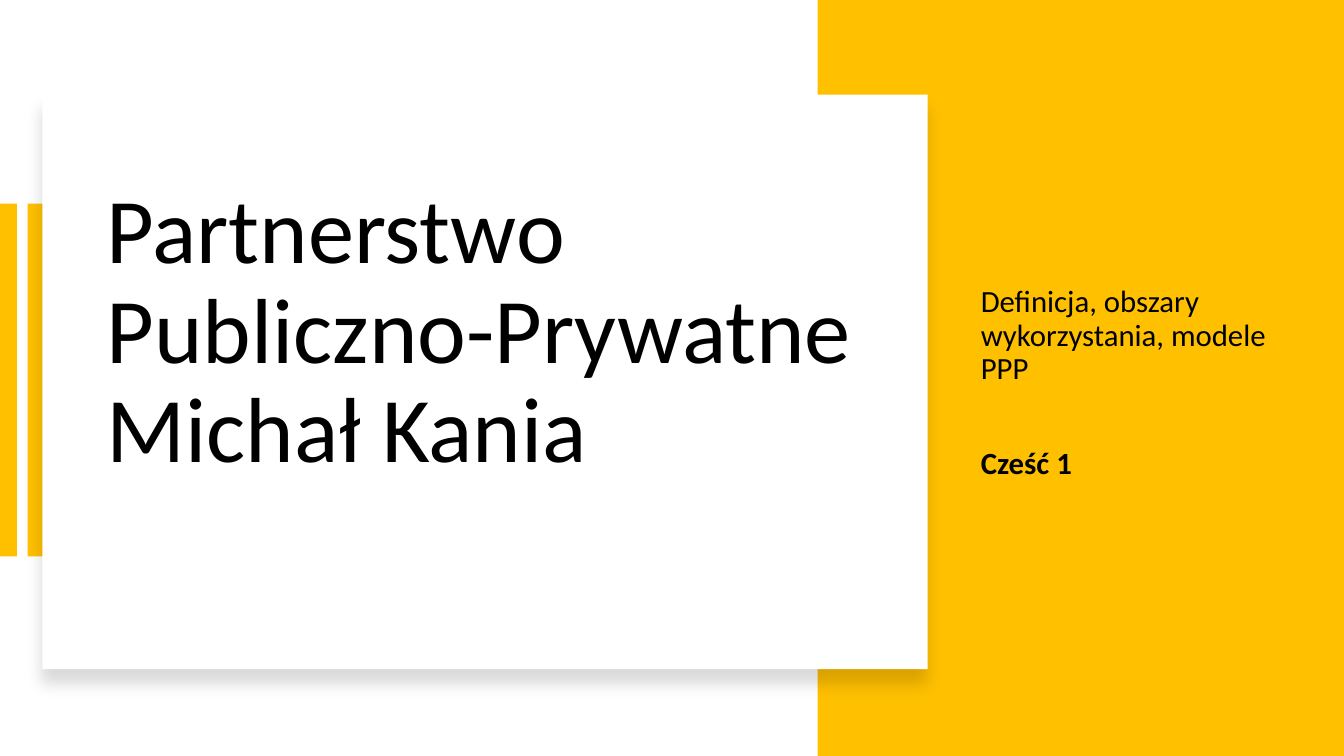
from lxml.etree import SubElement
from pptx import Presentation
from pptx.dml.color import RGBColor
from pptx.enum.shapes import MSO_SHAPE
from pptx.enum.text import MSO_ANCHOR
from pptx.oxml.ns import qn
from pptx.util import Inches, Pt

GOLD = RGBColor(0xFF, 0xC0, 0x00)
WHITE = RGBColor(0xFF, 0xFF, 0xFF)
BLACK = RGBColor(0x00, 0x00, 0x00)

deck = Presentation()
deck.slide_width = Inches(13.33)
deck.slide_height = Inches(7.5)
slide = deck.slides.add_slide(deck.slide_layouts[6])


def place(x, y, w, h):
    """Turn percent shares of the slide into lengths."""
    wide, high = deck.slide_width / 100, deck.slide_height / 100
    return int(x * wide), int(y * high), int(w * wide), int(h * high)


# Side panel, two bars at the left edge, then the card on top
blocks = [
    (60.83, 0, 39.17, 100, GOLD),
    (0, 26.93, 1.26, 46.67, GOLD),
    (2.06, 26.93, 1.26, 46.67, GOLD),
    (3.15, 12.53, 65.87, 76, WHITE),
]
for x, y, w, h, color in blocks:
    card = slide.shapes.add_shape(MSO_SHAPE.RECTANGLE, *place(x, y, w, h))
    card.shadow.inherit = False
    card.fill.solid()
    card.fill.fore_color.rgb = color
    card.line.fill.background()

# Soft shadow below the card
effect = card._element.spPr.find(qn("a:effectLst"))
shade = SubElement(effect, qn("a:outerShdw"), blurRad=str(Pt(11)),
                   dist=str(Pt(10)), dir="5400000", algn="t", rotWithShape="0")
tint = SubElement(shade, qn("a:srgbClr"), val=str(BLACK))
SubElement(tint, qn("a:alpha"), val="15000")

# Title and subtitle: place, size, paragraphs of (text, bold, space before)
texts = [
    ((7.2, 21.47, 58.29, 45.2), 66, [
        ("Partnerstwo Publiczno-Prywatne", False, 0),
        ("Michał Kania", False, 0),
    ]),
    ((72.24, 26.93, 24.61, 47.6), 22, [
        ("Definicja, obszary wykorzystania, modele PPP", False, 0),
        ("Cześć 1", True, 44),
    ]),
]
for spot, size, lines in texts:
    frame = slide.shapes.add_textbox(*place(*spot)).text_frame
    frame.word_wrap = True
    frame.vertical_anchor = MSO_ANCHOR.MIDDLE
    for i, (text, bold, gap) in enumerate(lines):
        para = frame.add_paragraph() if i else frame.paragraphs[0]
        para.line_spacing = 0.9
        para.space_before = Pt(gap)
        run = para.add_run()
        run.text = text
        run.font.name = "Calibri"
        run.font.size = Pt(size)
        run.font.bold = bold
        run.font.color.rgb = BLACK

deck.save("out.pptx")
